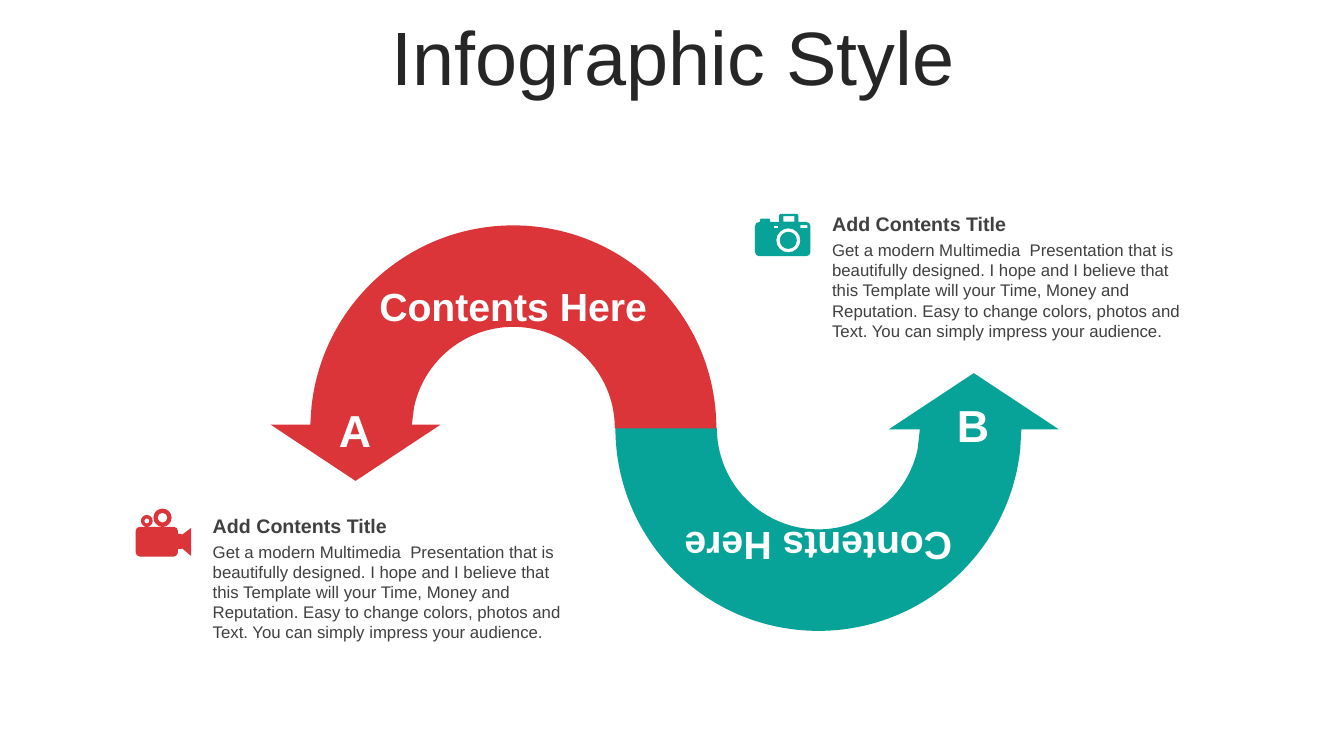
from dataclasses import dataclass
from math import cos, radians, sin, tan

from lxml.etree import SubElement
from pptx import Presentation
from pptx.dml.color import RGBColor
from pptx.enum.text import MSO_ANCHOR, PP_ALIGN
from pptx.oxml.ns import qn
from pptx.slide import Slide
from pptx.util import Pt

Point = tuple[float, float]
Step = list[Point]  # one point for a line, three for a cubic curve
Contour = list[Step]
Corner = tuple[float, float, float]


@dataclass(frozen=True)
class Theme:
    font: str = "Arial"
    red: str = "DC3539"
    teal: str = "07A398"
    white: str = "FFFFFF"
    title_color: str = "262626"
    body_color: str = "404040"
    title_size: float = 54
    letter_size: float = 32
    band_size: float = 28
    heading_size: float = 14
    body_size: float = 12


@dataclass(frozen=True)
class Label:
    text: str
    left: float
    top: float
    width: float
    height: float
    size: float
    color: str
    bold: bool = False
    align: PP_ALIGN = PP_ALIGN.LEFT
    anchor: MSO_ANCHOR = MSO_ANCHOR.TOP
    rotation: float = 0
    line_spacing: float = 1.0


@dataclass(frozen=True)
class CurvedArrow:
    letter: str
    color: str
    center: Point
    head: Point  # middle of the arrowhead's base, from the center, before turning
    turn: int  # 1 for an arch, -1 for the arch turned upside down
    letter_at: Point
    band_at: Point


@dataclass(frozen=True)
class Note:
    color: str
    icon_at: Point
    icon: list[Contour]
    text_at: Point


THEME = Theme()
OUTER_RADIUS, INNER_RADIUS = 145, 72.5
HEAD_HALF_WIDTH, HEAD_LENGTH = 60.8, 40.2
CORNER_PULL = 0.55
BAND_TEXT = "Contents Here"
HEADING = "Add Contents Title"
BODY = (
    "Get a modern Multimedia  Presentation that is beautifully designed. "
    "I hope and I believe that this Template will your Time, Money and Reputation. "
    "Easy to change colors, photos and Text. You can simply impress your audience."
)


def polygon(*points: Point) -> Contour:
    return [[point] for point in points]


def rectangle(left: float, top: float, right: float, bottom: float) -> Contour:
    return polygon((left, top), (right, top), (right, bottom), (left, bottom))


def arc(x: float, y: float, radius: float, *angles: float) -> Contour:
    """Curves through the angles, in degrees counterclockwise from the right."""
    def on_circle(angle: float, pull: float = 0) -> Point:
        turn = radians(angle)
        return (x + radius * (cos(turn) - pull * sin(turn)),
                y - radius * (sin(turn) + pull * cos(turn)))

    steps = [[on_circle(angles[0])]]
    for start, stop in zip(angles, angles[1:]):
        pull = 4 / 3 * tan(radians(stop - start) / 4)
        steps.append([on_circle(start, pull), on_circle(stop, -pull), on_circle(stop)])
    return steps


def circle(x: float, y: float, radius: float) -> Contour:
    return arc(x, y, radius, 0, 90, 180, 270, 360)


def toward(start: Point, stop: Point, share: float) -> Point:
    return tuple(a + (b - a) * share for a, b in zip(start, stop))


def rounded(*corners: Corner) -> Contour:
    """Polygon whose corners (x, y, radius) are eased by one curve each."""
    steps: Contour = []
    for index, (x, y, radius) in enumerate(corners):
        corner = (x, y)
        if radius == 0:
            steps.append([corner])
            continue
        ends = []
        for other in (corners[index - 1], corners[(index + 1) % len(corners)]):
            length = abs(other[0] - x) + abs(other[1] - y)
            ends.append(toward(corner, other[:2], radius / length))
        steps.append([ends[0]])
        steps.append([*(toward(end, corner, CORNER_PULL) for end in ends), ends[1]])
    return steps


CAMERA = [
    rounded((0, 5.8, 2.9), (3.6, 5.8, 0), (3.6, 3.4, 0.6), (10.8, 3.4, 0.6),
            (10.8, 5.8, 0), (17.3, 5.8, 0), (17.3, 0, 0.9), (31, 0, 0.9),
            (31, 5.8, 0), (39.6, 5.8, 2.9), (39.6, 30.2, 2.9), (0, 30.2, 2.9)),
    rectangle(20.2, 1.6, 28.1, 5.6),
    rectangle(13.7, 8.5, 16.6, 10.2),
    rectangle(32.4, 8, 37.4, 10.2),
    circle(23.8, 18.9, 8.6),
    circle(23.8, 18.9, 6.1),
]
VIDEO_CAMERA = [
    rounded((0, 13, 2.9), (30.2, 13, 2.9), (30.2, 18, 0), (33.1, 18, 0.5),
            (33.1, 18.7, 0), (39.6, 13.8, 0), (39.6, 33.8, 0), (33.1, 28.3, 0),
            (33.1, 28.8, 0.4), (30.2, 28.8, 0), (30.2, 34.2, 2.9), (0, 34.2, 2.9)),
    circle(19.2, 6.5, 6.5),
    circle(19.2, 6.5, 3.5),
    circle(8, 8.8, 4.2),
    circle(8, 8.8, 1.8),
]

ARROWS = [
    CurvedArrow("B", THEME.teal, (584.6, 305.6), (-111, -1.1), -1, (669.8, 280), (475.9, 194.4)),
    CurvedArrow("A", THEME.red, (366.7, 306), (-112.7, -2.7), 1, (228.4, 283.7), (257.8, 198)),
]
NOTES = [
    Note(THEME.teal, (539.3, 152.8), CAMERA, (587.3, 147.9)),
    Note(THEME.red, (96.9, 363.3), VIDEO_CAMERA, (144.9, 363.4)),
]


def add_outline(page: Slide, contours: list[Contour], at: Point, turn: int, color: str) -> None:
    """Draw contours around a point as one shape; inner contours become holes."""
    builder = None
    for contour in contours:
        points = [(Pt(at[0] + turn * x), Pt(at[1] + turn * y)) for step in contour for x, y in step]
        if builder is None:
            builder = page.shapes.build_freeform(*points[0], scale=1.0)
        else:
            builder.move_to(*points[0])
        builder.add_line_segments(points[1:], close=True)
    shape = builder.convert_to_shape()
    bend_curves(shape.element.find(".//" + qn("a:path")), contours)
    shape.shadow.inherit = False
    shape.fill.solid()
    shape.fill.fore_color.rgb = RGBColor.from_string(color)
    shape.line.fill.background()


def bend_curves(outline, contours: list[Contour]) -> None:
    """Join the three line segments of each curved step into one cubic curve."""
    segments = iter([part for part in outline if part.tag != qn("a:close")])
    for step in (step for contour in contours for step in contour):
        parts = [next(segments) for _ in step]
        if len(parts) == 3:
            curve = SubElement(outline, qn("a:cubicBezTo"))
            parts[0].addprevious(curve)
            for part in parts:
                curve.append(part[0])
                outline.remove(part)


def add_label(page: Slide, label: Label) -> None:
    box = page.shapes.add_textbox(
        Pt(label.left), Pt(label.top), Pt(label.width), Pt(label.height))
    box.rotation = label.rotation
    frame = box.text_frame
    frame.word_wrap = True
    frame.vertical_anchor = label.anchor
    para = frame.paragraphs[0]
    para.alignment, para.line_spacing = label.align, label.line_spacing
    span = para.add_run()
    span.text = label.text
    span.font.name, span.font.size, span.font.bold = THEME.font, Pt(label.size), label.bold
    span.font.color.rgb = RGBColor.from_string(label.color)


def add_arrow(page: Slide, arrow: CurvedArrow) -> None:
    x, y = arrow.head
    outline = [
        *arc(0, 0, OUTER_RADIUS, 0, 90, 174),
        *polygon((-OUTER_RADIUS, y), (x - HEAD_HALF_WIDTH, y), (x, y + HEAD_LENGTH),
                 (x + HEAD_HALF_WIDTH, y), (-INNER_RADIUS, y)),
        *arc(0, 0, INNER_RADIUS, 168, 90, 0),
    ]
    add_outline(page, [outline], arrow.center, arrow.turn, arrow.color)
    add_label(page, Label(arrow.letter, *arrow.letter_at, 50.4, 46.1, THEME.letter_size,
                          THEME.white, True, PP_ALIGN.CENTER, MSO_ANCHOR.MIDDLE))
    add_label(page, Label(BAND_TEXT, *arrow.band_at, 217.4, 217.4, THEME.band_size, THEME.white,
                          True, PP_ALIGN.CENTER, rotation=0 if arrow.turn == 1 else 180))


def add_note(page: Slide, note: Note) -> None:
    left, top = note.text_at
    add_outline(page, note.icon, note.icon_at, 1, note.color)
    add_label(page, Label(BODY, left, top + 19.8, 264.2, 79.9, THEME.body_size, THEME.body_color))
    add_label(page, Label(HEADING, left, top, 264.2, 24.5, THEME.heading_size,
                          THEME.body_color, True))


def main() -> None:
    deck = Presentation()
    deck.slide_width, deck.slide_height = Pt(960), Pt(540)
    page = deck.slides.add_slide(deck.slide_layouts[6])
    add_label(page, Label("Infographic Style", 25.2, 15.1, 911.5, 56.9, THEME.title_size,
                          THEME.title_color, align=PP_ALIGN.CENTER,
                          anchor=MSO_ANCHOR.MIDDLE, line_spacing=0.9))
    for arrow in ARROWS:
        add_arrow(page, arrow)
    for note in NOTES:
        add_note(page, note)
    deck.save("out.pptx")


if __name__ == "__main__":
    main()
